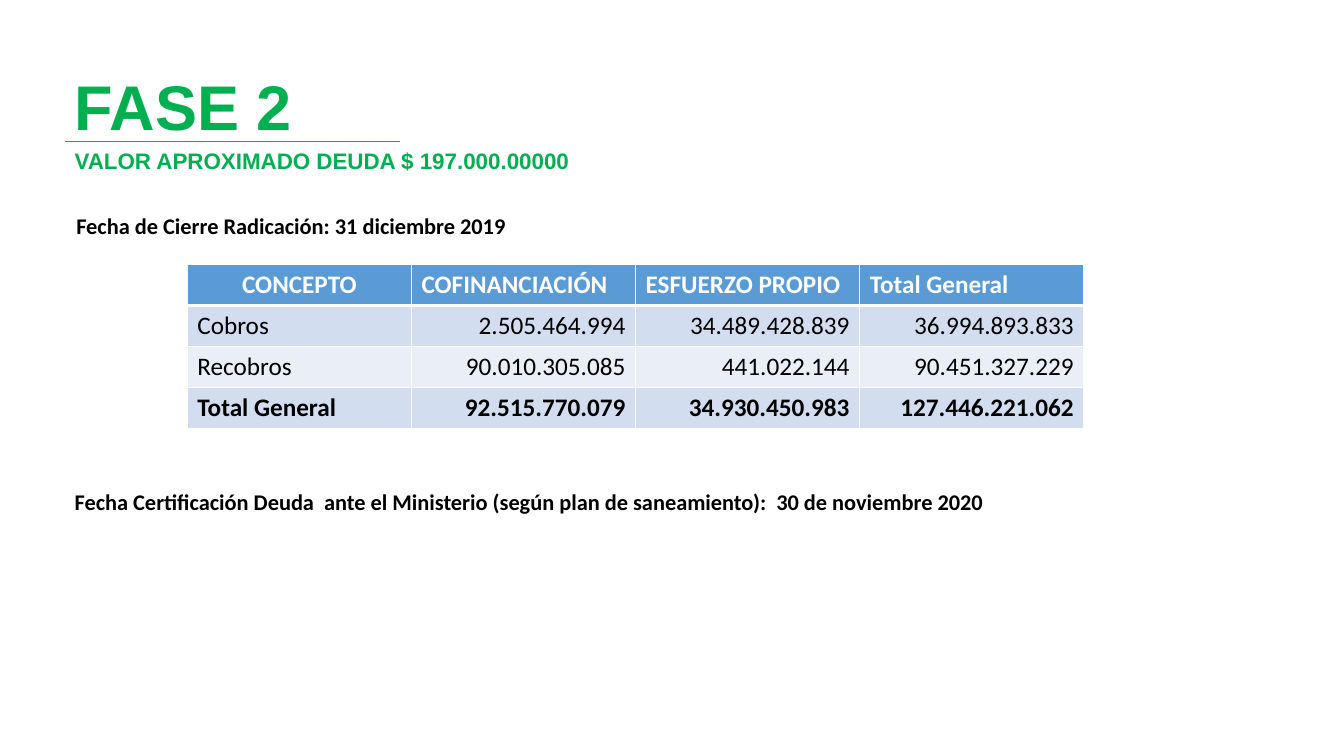
from lxml.etree import SubElement
from pptx import Presentation
from pptx.dml.color import RGBColor
from pptx.enum.shapes import MSO_CONNECTOR
from pptx.enum.text import MSO_ANCHOR, MSO_AUTO_SIZE, PP_ALIGN
from pptx.oxml.ns import qn
from pptx.util import Inches, Pt

GREEN = RGBColor(0x00, 0xB0, 0x50)
BLUE = RGBColor(0x5B, 0x9B, 0xD5)
PALE = RGBColor(0xD2, 0xDE, 0xEF)
LIGHT = RGBColor(0xEA, 0xEF, 0xF7)
WHITE = RGBColor(0xFF, 0xFF, 0xFF)
BLACK = RGBColor(0x00, 0x00, 0x00)

ROWS = [
    ("CONCEPTO", "COFINANCIACIÓN", "ESFUERZO PROPIO", "Total General"),
    ("Cobros", "2.505.464.994", "34.489.428.839", "36.994.893.833"),
    ("Recobros", "90.010.305.085", "441.022.144", "90.451.327.229"),
    ("Total General", "92.515.770.079", "34.930.450.983", "127.446.221.062"),
]


class Page:
    head_font = "Arial"
    body_font = "Calibri"
    grid_rows = 90

    def __init__(self, deck):
        self.slide = deck.slides.add_slide(deck.slide_layouts[5])
        self.unit = deck.slide_height / self.grid_rows

    def grid(self, *spans):
        return [round(span * self.unit) for span in spans]

    def style(self, frame, font, size, color, bold=True, align=PP_ALIGN.LEFT):
        for para in frame.paragraphs:
            para.alignment = align
            for run in para.runs:
                run.font.name = font
                run.font.size = Pt(size)
                run.font.bold = bold
                run.font.color.rgb = color

    def fit(self, frame):
        frame.word_wrap = True
        frame.auto_size = MSO_AUTO_SIZE.SHAPE_TO_FIT_TEXT
        frame.vertical_anchor = MSO_ANCHOR.TOP

    def title(self, text, place):
        shape = self.slide.shapes.title
        shape.left, shape.top, shape.width, shape.height = self.grid(*place)
        frame = shape.text_frame
        frame.text = text
        self.fit(frame)
        self.style(frame, self.head_font, 45, GREEN)

    def label(self, text, place, font=body_font, color=BLACK):
        frame = self.slide.shapes.add_textbox(*self.grid(*place)).text_frame
        frame.text = text
        self.fit(frame)
        self.style(frame, font, 16, color)

    def rule(self, left, right, top):
        ends = self.grid(left, top, right, top)
        line = self.slide.shapes.add_connector(MSO_CONNECTOR.STRAIGHT, *ends)
        line.line.color.rgb = GREEN
        line.line.width = Pt(0.5)
        SubElement(line._element.spPr, qn("a:effectLst"))

    def edge(self, cell, side, width):
        props = cell._tc.get_or_add_tcPr()
        line = SubElement(props, qn(f"a:ln{side}"), w=str(Pt(width)))
        fill = SubElement(line, qn("a:solidFill"))
        SubElement(fill, qn("a:srgbClr"), val=str(WHITE))

    def table(self, data, place):
        size = len(data), len(data[0])
        table = self.slide.shapes.add_table(*size, *self.grid(*place)).table
        fills = [BLUE, PALE, LIGHT, PALE]
        for row, texts in enumerate(data):
            head = row == 0
            thick = {"T": 3 if row == 1 else 1, "B": 3 if head else 1}
            for col, text in enumerate(texts):
                cell = table.cell(row, col)
                for side in "LRTB":
                    self.edge(cell, side, thick.get(side, 1))
                cell.fill.solid()
                cell.fill.fore_color.rgb = fills[row]
                cell.text_frame.text = text
                if head:
                    align = PP_ALIGN.LEFT if col else PP_ALIGN.CENTER
                else:
                    align = PP_ALIGN.RIGHT if col else PP_ALIGN.LEFT
                color = WHITE if head else BLACK
                bold = row in (0, len(data) - 1)
                self.style(cell.text_frame, self.body_font, 18, color, bold, align)


def main():
    deck = Presentation()
    deck.slide_width, deck.slide_height = Inches(13.33), Inches(7.5)
    page = Page(deck)
    page.title("FASE 2", (7.7, 7.4, 123.6, 10.3))
    page.rule(7.7, 47.6, 16.8)
    page.table(ROWS, (22.3, 31.5, 106.7, 19.5))
    page.label("Fecha de Cierre Radicación: 31 diciembre 2019", (7.9, 24.7, 76.7, 4.4))
    page.label(
        "Fecha Certificación Deuda  ante el Ministerio (según plan de saneamiento):  30 de noviembre 2020",
        (7.7, 57.5, 115.3, 4.4),
    )
    page.label(
        "VALOR APROXIMADO DEUDA $ 197.000.00000",
        (7.7, 16.9, 63, 4.4),
        Page.head_font,
        GREEN,
    )
    deck.save("out.pptx")


if __name__ == "__main__":
    main()
